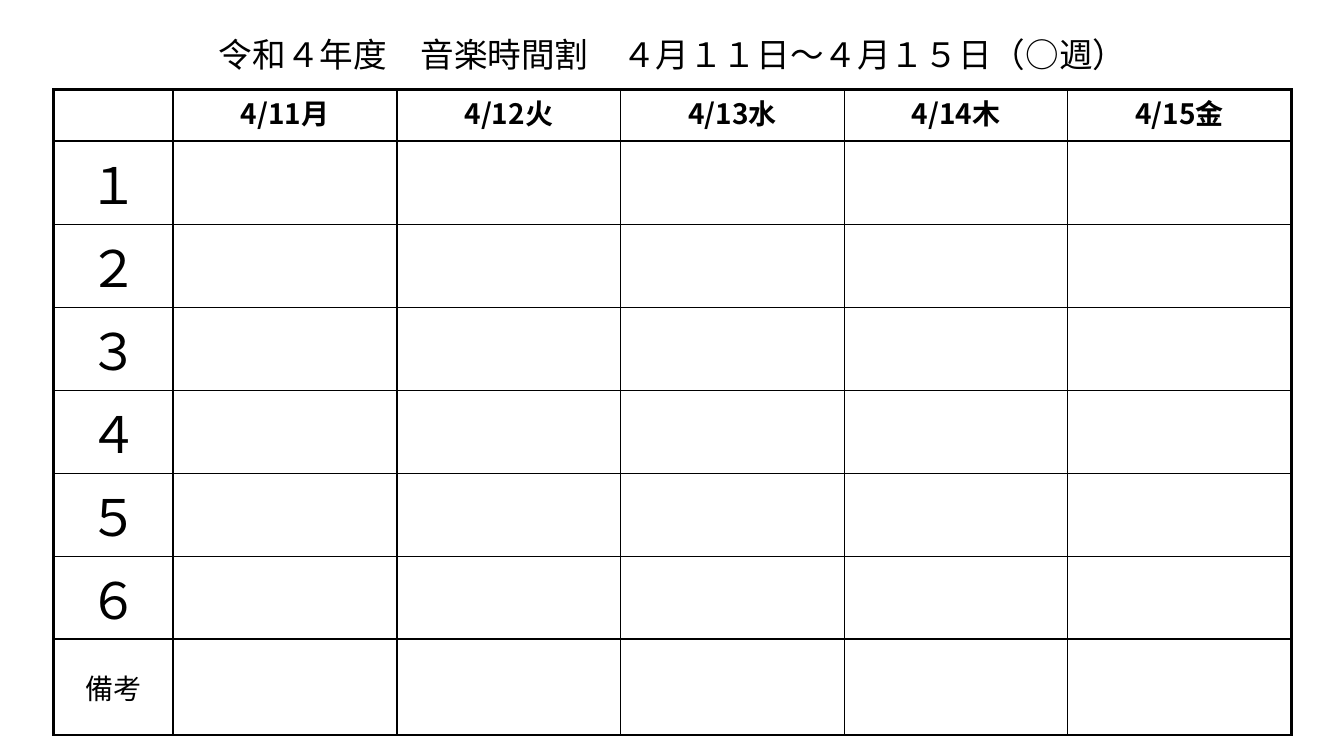
from dataclasses import dataclass

import pptx
import pptx.dml.color
import pptx.enum.text
import pptx.oxml.ns
import pptx.table
import pptx.text.text
import pptx.util
from lxml import etree
from pptx.util import Inches

FONT = "Noto Sans CJK JP"
COLORS = {"ink": "000000", "paper": "FFFFFF"}
TABLE_WIDTH = 12.28
PERIOD_WIDTH = 1.19
COLUMN_WIDTHS = [PERIOD_WIDTH] + [(TABLE_WIDTH - PERIOD_WIDTH) / 5] * 5
ROW_HEIGHTS = [0.51] + [0.8] * 6 + [0.95]
COLUMN_RULES = [2.25, 1.5, 1, 1, 1, 1, 2.25]
ROW_RULES = [2.25, 1.5, 1, 1, 1, 1, 1, 1.5, 2.25]


@dataclass
class Label:
    row: int
    column: int
    text: str
    size: int
    bold: bool = False
    line_points: int | None = None


def rgb(name: str) -> pptx.dml.color.RGBColor:
    return pptx.dml.color.RGBColor.from_string(COLORS[name])


def style_paragraph(p: pptx.text.text._Paragraph, size: int, bold: bool = False) -> None:
    p.alignment = pptx.enum.text.PP_ALIGN.CENTER
    for r in p.runs:
        r.font.size = pptx.util.Pt(size)
        r.font.bold = bold
        r.font.color.rgb = rgb("ink")
        r.font.name = FONT
        ea = etree.SubElement(r.font._element, pptx.oxml.ns.qn("a:ea"))
        ea.set("typeface", FONT)


def add_border(cell: pptx.table._Cell, side: str, points: float) -> None:
    qn = pptx.oxml.ns.qn
    tc_pr = cell._tc.get_or_add_tcPr()
    ln = etree.SubElement(tc_pr, qn(f"a:ln{side}"), w=str(pptx.util.Pt(points)))
    fill = etree.SubElement(ln, qn("a:solidFill"))
    etree.SubElement(fill, qn("a:srgbClr"), val=COLORS["ink"])


def format_cell(cell: pptx.table._Cell, row: int, column: int) -> None:
    add_border(cell, "L", COLUMN_RULES[column])
    add_border(cell, "R", COLUMN_RULES[column + 1])
    add_border(cell, "T", ROW_RULES[row])
    add_border(cell, "B", ROW_RULES[row + 1])
    cell.fill.solid()
    cell.fill.fore_color.rgb = rgb("paper")
    cell.vertical_anchor = pptx.enum.text.MSO_ANCHOR.MIDDLE


def write_label(table: pptx.table.Table, label: Label) -> None:
    tf = table.cell(label.row, label.column).text_frame
    tf.text = label.text
    p = tf.paragraphs[0]
    style_paragraph(p, label.size, label.bold)
    if label.line_points:
        p.line_spacing = pptx.util.Pt(label.line_points)


def main() -> None:
    prs = pptx.Presentation()
    prs.slide_width, prs.slide_height = Inches(13.33), Inches(7.5)
    s = prs.slides.add_slide(prs.slide_layouts[5])

    title = s.shapes.title
    title.left, title.top = Inches(0.2), Inches(0.3)
    title.width, title.height = Inches(12.94), Inches(0.49)
    tf = title.text_frame
    tf.text = "令和４年度　音楽時間割　４月１１日〜４月１５日（○週）"
    tf.auto_size = pptx.enum.text.MSO_AUTO_SIZE.NONE
    tf.vertical_anchor = pptx.enum.text.MSO_ANCHOR.BOTTOM
    tf.paragraphs[0].line_spacing = 0.9
    style_paragraph(tf.paragraphs[0], 24)

    table = s.shapes.add_table(
        len(ROW_HEIGHTS), len(COLUMN_WIDTHS),
        Inches(0.53), Inches(0.89), Inches(TABLE_WIDTH), Inches(sum(ROW_HEIGHTS)),
    ).table
    table.first_row = table.horz_banding = False
    for column, width in zip(table.columns, COLUMN_WIDTHS):
        column.width = Inches(width)
    for row, height in zip(table.rows, ROW_HEIGHTS):
        row.height = Inches(height)
    for i, row in enumerate(table.rows):
        for j, cell in enumerate(row.cells):
            format_cell(cell, i, j)

    days = [Label(0, j, f"4/{10 + j}{day}", 20, True, 24) for j, day in enumerate("月火水木金", 1)]
    periods = [Label(i, 0, digit, 36) for i, digit in enumerate("１２３４５６", 1)]
    for label in days + periods + [Label(7, 0, "備考", 20)]:
        write_label(table, label)

    prs.save("out.pptx")


if __name__ == "__main__":
    main()
